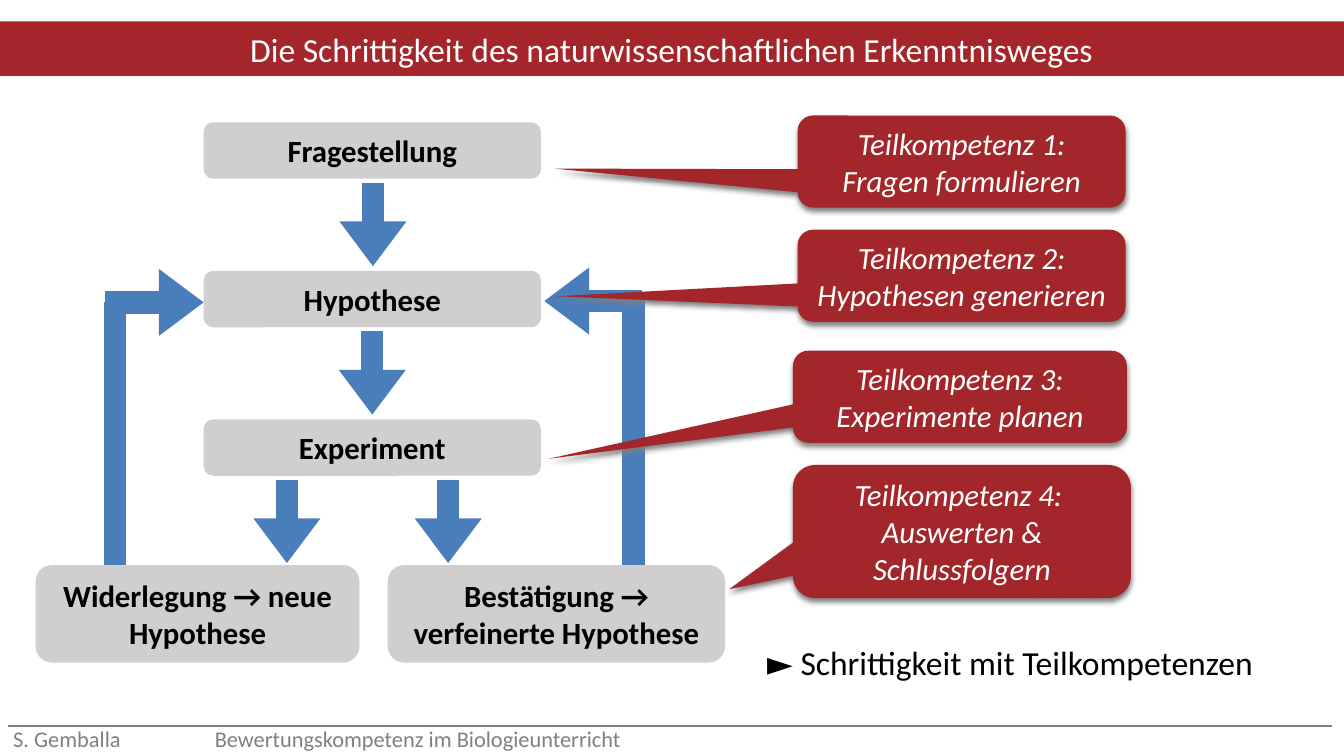
from dataclasses import dataclass

from lxml import etree
from pptx import Presentation
from pptx.dml.color import RGBColor
from pptx.enum.shapes import MSO_CONNECTOR, MSO_SHAPE
from pptx.enum.text import MSO_ANCHOR, MSO_AUTO_SIZE, PP_ALIGN
from pptx.oxml.ns import qn
from pptx.util import Pt

EMU_PER_PX = 4572  # 200 px to the inch
TITLE_ONLY = 5
ROUNDED = MSO_SHAPE.ROUNDED_RECTANGLE
CALLOUT = MSO_SHAPE.ROUNDED_RECTANGULAR_CALLOUT
STRAIGHT = MSO_CONNECTOR.STRAIGHT
LEFT, CENTER = PP_ALIGN.LEFT, PP_ALIGN.CENTER
TOP, MIDDLE = MSO_ANCHOR.TOP, MSO_ANCHOR.MIDDLE


@dataclass(frozen=True)
class Theme:
    font: str = "Calibri"
    banner: str = "A4262A"
    callout: str = "A3262A"
    box: str = "D0CECE"
    arrow: str = "4A7EBB"
    muted: str = "808080"
    dark: str = "000000"
    light: str = "FFFFFF"
    title_size: float = 18
    box_size: float = 16.5
    footer_size: float = 12
    arrow_width: float = 12
    rule_width: float = 1
    corner: float = 0.167


def px(value):
    return round(value * EMU_PER_PX)


def write_text(shape, text, *, size, color, font, bold=False, italic=False,
               align=CENTER, anchor=MIDDLE, inset=None):
    """Fill a shape with text, one paragraph per line."""
    frame = shape.text_frame
    frame.word_wrap = True
    frame.auto_size = MSO_AUTO_SIZE.NONE
    frame.vertical_anchor = anchor
    side, edge = (20, 10) if inset is None else (inset, inset)
    frame.margin_left = frame.margin_right = px(side)
    frame.margin_top = frame.margin_bottom = px(edge)
    frame.text = text
    for paragraph in frame.paragraphs:
        paragraph.alignment = align
        for run in paragraph.runs:
            run.font.name = font
            run.font.size = Pt(size)
            run.font.bold = bold
            run.font.italic = italic
            run.font.color.rgb = RGBColor.from_string(color)


class SlideBuilder:
    def __init__(self, slide, theme):
        self.slide = slide
        self.theme = theme

    def title(self, text, left, top, width, height):
        shape = self.slide.shapes.title
        shape.left, shape.top, shape.width, shape.height = map(px, (left, top, width, height))
        shape.fill.solid()
        shape.fill.fore_color.rgb = RGBColor.from_string(self.theme.banner)
        write_text(shape, text, size=self.theme.title_size, color=self.theme.light,
                   font=self.theme.font)

    def text(self, text, left, top, width, height, size, color, tabs=()):
        shape = self.slide.shapes.add_textbox(*map(px, (left, top, width, height)))
        write_text(shape, text, size=size, color=color, font=self.theme.font,
                   align=LEFT, anchor=TOP)
        if tabs:
            properties = shape.text_frame.paragraphs[0]._p.get_or_add_pPr()
            tab_list = etree.SubElement(properties, qn("a:tabLst"))
            for position in tabs:
                etree.SubElement(tab_list, qn("a:tab"), pos=str(px(position)), algn="l")

    def shape(self, kind, left, top, width, height, color):
        shape = self.slide.shapes.add_shape(kind, *map(px, (left, top, width, height)))
        shape.shadow.inherit = False
        shape.fill.solid()
        shape.fill.fore_color.rgb = RGBColor.from_string(color)
        shape.line.fill.background()
        return shape

    def box(self, text, left, top, width, height):
        shape = self.shape(ROUNDED, left, top, width, height, self.theme.box)
        shape.adjustments[0] = self.theme.corner
        write_text(shape, text, size=self.theme.box_size, color=self.theme.dark,
                   font=self.theme.font, bold=True)

    def callout(self, text, left, top, width, height, tip_x, tip_y):
        shape = self.shape(CALLOUT, left, top, width, height, self.theme.callout)
        shape.adjustments[0] = (tip_x - left) / width - 0.5
        shape.adjustments[1] = (tip_y - top) / height - 0.5
        shape.adjustments[2] = self.theme.corner
        effects = shape._element.spPr.find(qn("a:effectLst"))
        shadow = etree.SubElement(effects, qn("a:outerShdw"), blurRad=str(Pt(3.1)),
                                  dist=str(Pt(1.8)), dir="5400000", rotWithShape="0")
        etree.SubElement(shadow, qn("a:srgbClr"), val=self.theme.muted)
        write_text(shape, text, size=self.theme.box_size, color=self.theme.light,
                   font=self.theme.font, italic=True, inset=6)

    def line(self, x1, y1, x2, y2, color, width, arrow=False):
        connector = self.slide.shapes.add_connector(STRAIGHT, *map(px, (x1, y1, x2, y2)))
        connector.line.color.rgb = RGBColor.from_string(color)
        connector.line.width = Pt(width)
        if arrow:
            etree.SubElement(connector.line._get_or_add_ln(), qn("a:tailEnd"),
                             type="triangle", len="sm")
        etree.SubElement(connector._element.spPr, qn("a:effectLst"))

    def flow(self, x1, y1, x2, y2, arrow=True):
        self.line(x1, y1, x2, y2, self.theme.arrow, self.theme.arrow_width, arrow)


def main():
    theme = Theme()
    presentation = Presentation()
    presentation.slide_width, presentation.slide_height = px(2000), px(1125)
    slide = presentation.slides.add_slide(presentation.slide_layouts[TITLE_ONLY])
    builder = SlideBuilder(slide, theme)

    # Title banner and footer
    builder.title("Die Schrittigkeit des naturwissenschaftlichen Erkenntnisweges",
                  0, 32, 2000, 81)
    builder.text("S. Gemballa \t\tBewertungskompetenz im Biologieunterricht",
                 0, 1069, 2000, 60, theme.footer_size, theme.muted, tabs=(240, 300))
    builder.line(12, 1081, 1982, 1081, theme.muted, theme.rule_width)

    # Feedback paths to the hypothesis, behind the boxes
    builder.flow(943, 898, 943, 436, arrow=False)
    builder.flow(956, 448, 810, 448)
    builder.flow(171, 946, 171, 450, arrow=False)
    builder.flow(156, 450, 303, 450)

    # Steps of inquiry
    for index, step in enumerate(("Fragestellung", "Hypothese", "Experiment")):
        builder.box(step, 303, 182 + 221 * index, 502, 84)
    builder.box("Widerlegung → neue Hypothese", 53, 841, 482, 145)
    builder.box("Bestätigung → verfeinerte Hypothese", 577, 841, 502, 145)

    # Downward arrows
    for x, y in ((555, 272), (554, 493), (427, 714), (667, 714)):
        builder.flow(x, y, x, y + 124)

    # Partial competences, each pointing at its step
    callouts = (
        ("Teilkompetenz 1:\nFragen formulieren", 1187, 172, 488, 137, 825, 251),
        ("Teilkompetenz 2: Hypothesen generieren", 1187, 342, 488, 137, 828, 441),
        ("Teilkompetenz 3: Experimente planen", 1180, 522, 497, 137, 816, 683),
        ("Teilkompetenz 4: \nAuswerten & Schlussfolgern", 1180, 692, 503, 198, 1085, 877),
    )
    for callout in callouts:
        builder.callout(*callout)

    # Conclusion
    builder.text("► Schrittigkeit mit Teilkompetenzen", 1122, 946, 856, 81,
                 theme.title_size, theme.dark)

    presentation.save("out.pptx")


if __name__ == "__main__":
    main()
